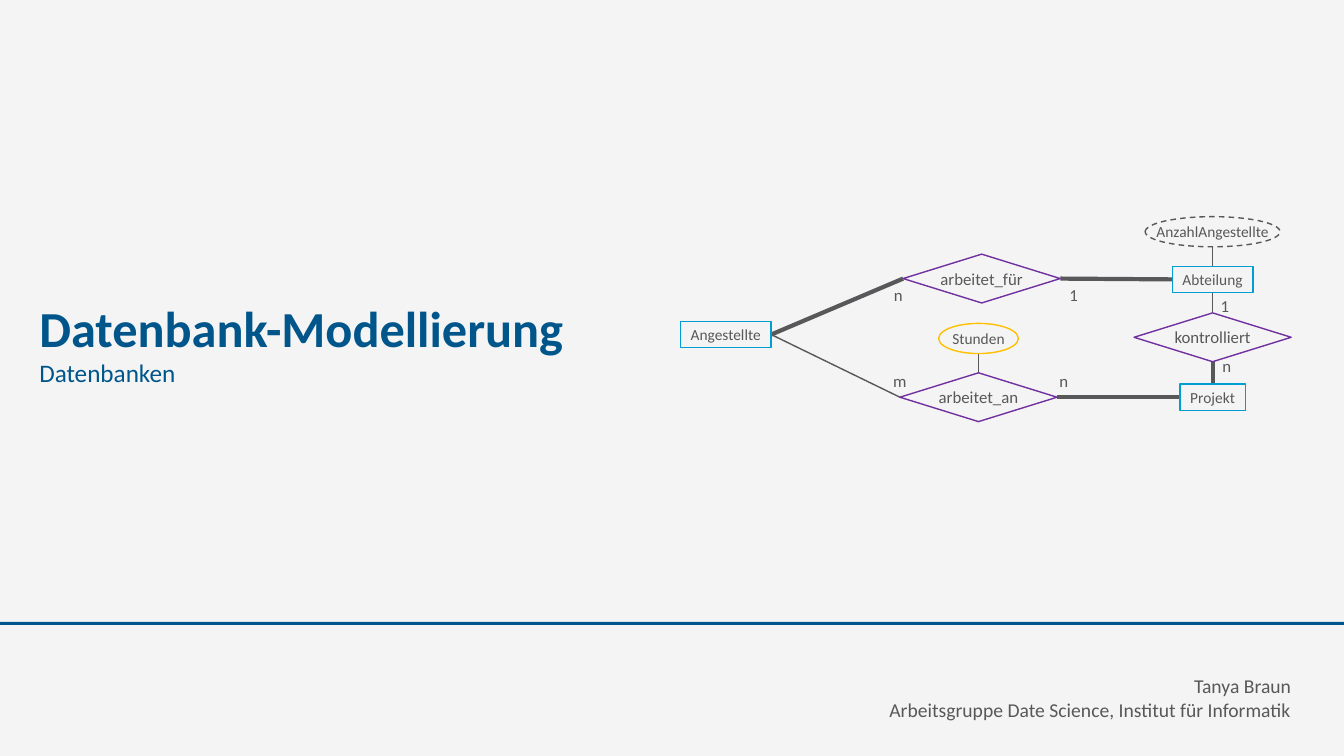
from pptx import Presentation
from pptx import util as u
from pptx.dml.color import RGBColor
from pptx.enum import dml, shapes, text
from pptx.oxml.ns import qn
from lxml import etree

PALE = RGBColor(0xF4, 0xF4, 0xF4)
NAVY = RGBColor(0x00, 0x56, 0x8A)
GREY = RGBColor(0x58, 0x58, 0x5A)
CYAN = RGBColor(0x00, 0x9D, 0xD1)
PLUM = RGBColor(0x70, 0x30, 0xA0)
GOLD = RGBColor(0xFF, 0xC0, 0x00)
Cm = u.Cm

# Content: lengths in cm, places as left, top, width, height
TITLE = "Datenbank-Modellierung", (0.99, 5.46, 23.72, 3.56)
TOPIC = "Datenbanken", (0.99, 9.0, 23.72, 2.49)
SPEAKER = ["Tanya Braun", "Arbeitsgruppe Date Science, Institut für Informatik"]

# Kind: preset, height, line colour, text size
KINDS = {
    "entity": (shapes.MSO_SHAPE.RECTANGLE, 0.66, CYAN, 11),
    "relation": (shapes.MSO_SHAPE.DIAMOND, 1.23, PLUM, 12),
    "field": (shapes.MSO_SHAPE.OVAL, 0.76, GOLD, 11),
    "derived": (shapes.MSO_SHAPE.OVAL, 0.76, GREY, 11),
}
# Node: kind, centre x, centre y, width
NODES = {
    "Abteilung": ("entity", 30.56, 7.04, 2.03),
    "AnzahlAngestellte": ("derived", 30.56, 5.84, 3.4),
    "arbeitet_für": ("relation", 24.74, 7.02, 3.96),
    "Angestellte": ("entity", 18.29, 8.43, 2.29),
    "kontrolliert": ("relation", 30.56, 8.5, 3.96),
    "Projekt": ("entity", 30.56, 10.01, 1.65),
    "arbeitet_an": ("relation", 24.66, 10.01, 3.96),
    "Stunden": ("field", 24.66, 8.53, 2.01),
}
# Link: node, side, node, side, line width
LINKS = [
    ("AnzahlAngestellte", "bottom", "Abteilung", "top", 1),
    ("arbeitet_für", "right", "Abteilung", "left", 3),
    ("Angestellte", "right", "arbeitet_für", "left", 3),
    ("Abteilung", "bottom", "kontrolliert", "top", 1),
    ("kontrolliert", "bottom", "Projekt", "top", 3),
    ("arbeitet_an", "right", "Projekt", "left", 3),
    ("Angestellte", "right", "arbeitet_an", "left", 1),
    ("Stunden", "bottom", "arbeitet_an", "top", 1),
]
# Count: text, centre x, centre y
COUNTS = [
    ("n", 22.64, 7.44), ("1", 27.06, 7.44), ("1", 30.87, 7.7),
    ("n", 30.92, 9.22), ("m", 22.68, 9.6), ("n", 26.81, 9.6),
]
SIDES = {"left": (-0.5, 0), "right": (0.5, 0), "top": (0, -0.5), "bottom": (0, 0.5)}


def write(shape, lines, size, color=GREY, bold=False, align="CENTER",
          anchor="MIDDLE", wrap=False, gap=1.0):
    frame = shape.text_frame
    frame.auto_size = text.MSO_AUTO_SIZE.NONE
    frame.word_wrap = wrap
    frame.vertical_anchor = getattr(text.MSO_ANCHOR, anchor)
    frame.margin_left = frame.margin_right = 0
    frame.margin_top = frame.margin_bottom = 0
    frame.text = "\n".join(lines)
    for para in frame.paragraphs:
        para.alignment = getattr(text.PP_ALIGN, align)
        para.line_spacing = gap
        para.space_before = u.Pt(0)
        font = para.font
        font.name, font.size, font.bold = "Calibri", u.Pt(size), bold
        font.color.rgb = color


def place(shape, box):
    shape.left, shape.top, shape.width, shape.height = map(Cm, box)


def centre(x, y, width, height):
    return [Cm(v) for v in (x - width / 2, y - height / 2, width, height)]


def dock(name, side):
    kind, x, y, width = NODES[name]
    across, down = SIDES[side]
    return Cm(x + across * width), Cm(y + down * KINDS[kind][1])


def build():
    deck = Presentation()
    deck.slide_width, deck.slide_height = Cm(33.87), Cm(19.05)
    slide = deck.slides.add_slide(deck.slide_layouts[0])
    slide.background.fill.solid()
    slide.background.fill.fore_color.rgb = PALE
    parts = slide.shapes

    # Title and topic
    head, topic = parts.title, slide.placeholders[1]
    place(head, TITLE[1])
    write(head, [TITLE[0]], 36, NAVY, bold=True, align="LEFT",
          anchor="BOTTOM", wrap=True, gap=0.9)
    place(topic, TOPIC[1])
    write(topic, [TOPIC[0]], 18, NAVY, align="LEFT", anchor="TOP", wrap=True)

    # Footer
    rule = parts.add_shape(shapes.MSO_SHAPE.RECTANGLE, 0, Cm(15.67),
                           deck.slide_width, Cm(0.08))
    rule.shadow.inherit = False
    rule.fill.solid()
    rule.fill.fore_color.rgb = NAVY
    rule.line.fill.background()
    speaker = parts.add_textbox(Cm(13.34), Cm(16.87), Cm(19.2), Cm(1.3))
    write(speaker, SPEAKER, 14, align="RIGHT", anchor="BOTTOM", wrap=True)

    # Diagram links
    for start, out, end, into, weight in LINKS:
        link = parts.add_connector(shapes.MSO_CONNECTOR.STRAIGHT,
                                   *dock(start, out), *dock(end, into))
        link.line.color.rgb = GREY
        link.line.width = u.Pt(weight)
        etree.SubElement(link._element.spPr, qn("a:effectLst"))

    # Diagram nodes
    for name, (kind, x, y, width) in NODES.items():
        preset, height, color, size = KINDS[kind]
        node = parts.add_shape(preset, *centre(x, y, width, height))
        node.shadow.inherit = False
        node.fill.solid()
        node.fill.fore_color.rgb = PALE
        node.line.color.rgb = color
        node.line.width = u.Pt(1)
        if kind == "derived":
            node.line.dash_style = dml.MSO_LINE.DASH
        write(node, [name], size)

    # Counts beside the links
    for count, x, y in COUNTS:
        write(parts.add_textbox(*centre(x, y, 0.74, 0.76)), [count], 12)

    deck.save("out.pptx")


if __name__ == "__main__":
    build()
